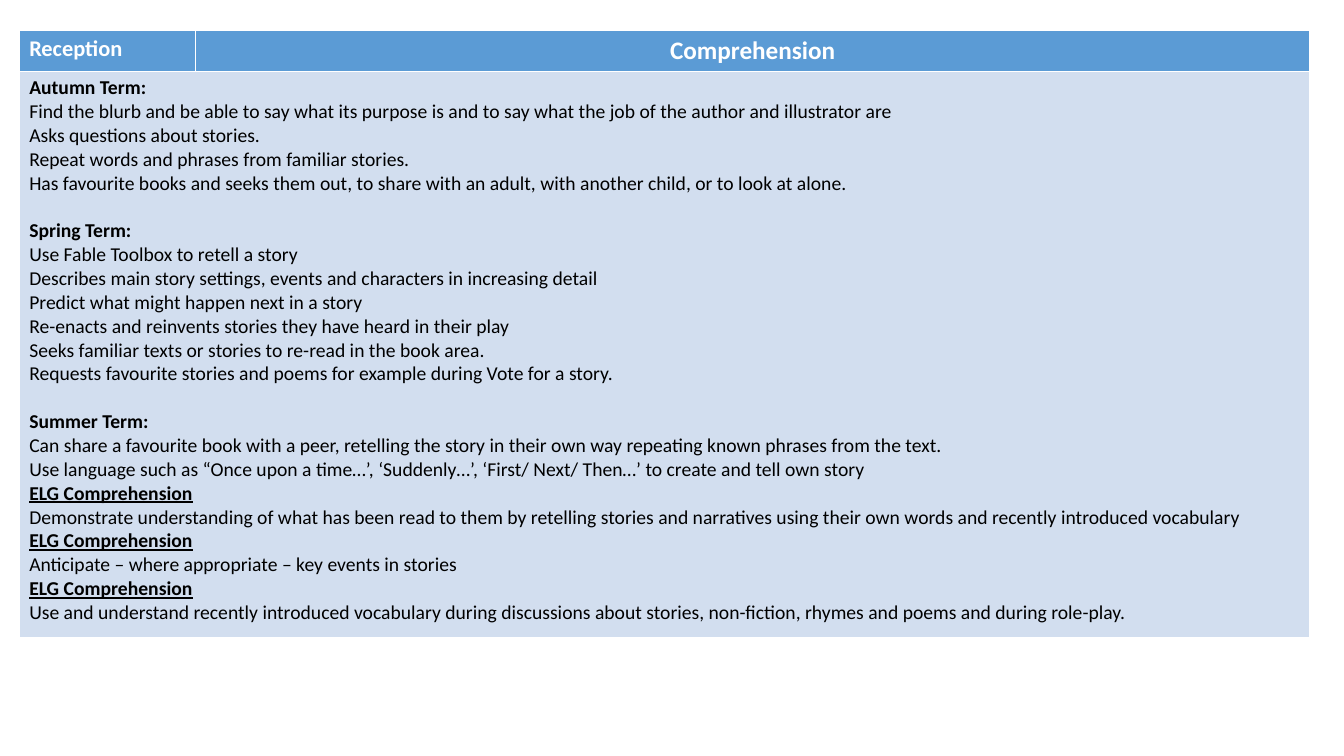
from pptx import Presentation
from pptx.dml.color import RGBColor
from pptx.enum.text import PP_ALIGN
from pptx.util import Inches, Pt

WHITE = RGBColor(0xFF, 0xFF, 0xFF)
BLACK = RGBColor(0x00, 0x00, 0x00)
HEADER_BLUE = RGBColor(0x5B, 0x9B, 0xD5)
BODY_BLUE = RGBColor(0xD2, 0xDE, 0xEF)
LEFT = PP_ALIGN.LEFT
CENTER = PP_ALIGN.CENTER

ELG_HEADING = "ELG Comprehension"
SECTIONS = [
    ("Autumn Term:", [
        "Find the blurb and be able to say what its purpose is and to say what the job of the author and illustrator are",
        "Asks questions about stories.",
        "Repeat words and phrases from familiar stories.",
        "Has favourite books and seeks them out, to share with an adult, with another child, or to look at alone.",
    ]),
    ("Spring Term:", [
        "Use Fable Toolbox to retell a story",
        "Describes main story settings, events and characters in increasing detail",
        "Predict what might happen next in a story",
        "Re-enacts and reinvents stories they have heard in their play",
        "Seeks familiar texts or stories to re-read in the book area.",
        "Requests favourite stories and poems for example during Vote for a story.",
    ]),
    ("Summer Term:", [
        "Can share a favourite book with a peer, retelling the story in their own way repeating known phrases from the text.",
        "Use language such as “Once upon a time…’, ‘Suddenly…’, ‘First/ Next/ Then…’ to create and tell own story",
    ]),
    (ELG_HEADING, [
        "Demonstrate understanding of what has been read to them by retelling stories and narratives using their own words and recently introduced vocabulary",
    ]),
    (ELG_HEADING, ["Anticipate – where appropriate – key events in stories"]),
    (ELG_HEADING, [
        "Use and understand recently introduced vocabulary during discussions about stories, non-fiction, rhymes and poems and during role-play.",
    ]),
]


def write(paragraph, text, size=14, color=BLACK, bold=False, underline=False, align=LEFT, before=0):
    paragraph.alignment = align
    paragraph.space_before = Pt(before)
    run = paragraph.add_run()
    run.text = text
    run.font.name = "Calibri"
    run.font.size = Pt(size)
    run.font.bold = bold
    run.font.underline = underline
    run.font.color.rgb = color


presentation = Presentation()
presentation.slide_width = Inches(13.33)
presentation.slide_height = Inches(7.5)
slide = presentation.slides.add_slide(presentation.slide_layouts[6])

table = slide.shapes.add_table(2, 2, Inches(0.19), Inches(0.3), Inches(12.8), Inches(6.02)).table
for column, width in zip(table.columns, (1.75, 11.05)):
    column.width = Inches(width)
for row, height in zip(table.rows, (0.4, 5.62)):
    row.height = Inches(height)

headers = [("Reception", 16, LEFT), ("Comprehension", 18, CENTER)]
for column_index, (text, size, align) in enumerate(headers):
    header = table.cell(0, column_index)
    header.fill.solid()
    header.fill.fore_color.rgb = HEADER_BLUE
    write(header.text_frame.paragraphs[0], text, size=size, color=WHITE, bold=True, align=align)

body = table.cell(1, 0)
body.merge(table.cell(1, 1))
body.fill.solid()
body.fill.fore_color.rgb = BODY_BLUE

paragraph = body.text_frame.paragraphs[0]
for section_index, (heading, statements) in enumerate(SECTIONS):
    is_goal = heading == ELG_HEADING
    if section_index > 0:
        paragraph = body.text_frame.add_paragraph()
    gap = 17 if section_index > 0 and not is_goal else 0
    write(paragraph, heading, bold=True, underline=is_goal, before=gap)
    for statement in statements:
        write(body.text_frame.add_paragraph(), statement)

presentation.save("out.pptx")
